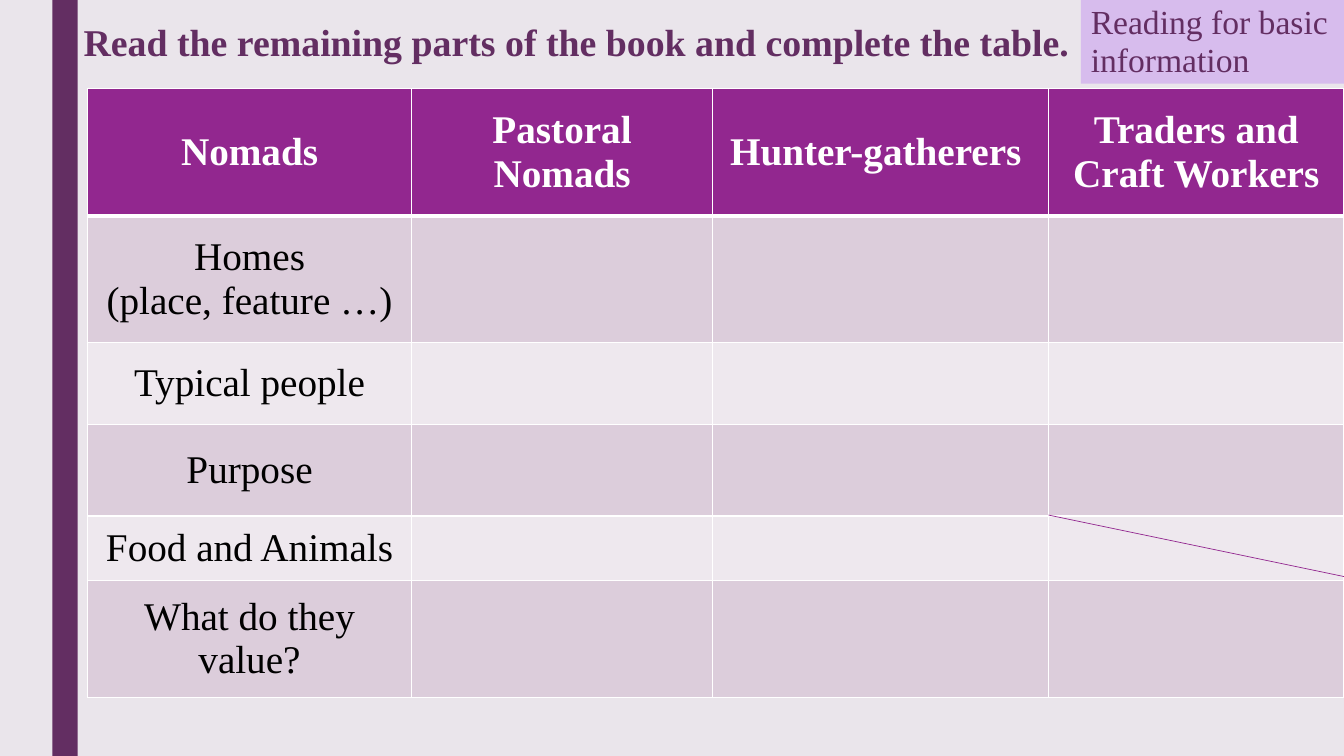
import pptx
import pptx.dml.color
import pptx.enum.shapes
import pptx.enum.text
import pptx.oxml
import pptx.util
from lxml import etree

Inches = pptx.util.Inches
Pt = pptx.util.Pt
RGB = pptx.dml.color.RGBColor.from_string
PP_ALIGN = pptx.enum.text.PP_ALIGN
ANCHOR = pptx.enum.text.MSO_ANCHOR
MSO_SHAPE = pptx.enum.shapes.MSO_SHAPE
NS = "http://schemas.openxmlformats.org/drawingml/2006/main"

THEME = {
    "font": "Times New Roman",
    "background": "EAE5EB",
    "plum": "632E62",
    "lilac": "D7BCED",
    "header": "92278F",
    "bands": ["DCCDDB", "EEE8EE"],
    "white": "FFFFFF",
    "black": "000000",
    "title_size": 27,
    "label_size": 24,
    "table_size": 28,
}


def write(tf, text, size, color, bold=False, align=PP_ALIGN.LEFT, spacing=None):
    for i, line in enumerate(text.split("\n")):
        p = tf.add_paragraph() if i else tf.paragraphs[0]
        p.alignment = align
        if spacing:
            p.line_spacing = spacing
            p.space_before, p.space_after = Pt(10), Pt(2)
        r = p.add_run()
        r.text = line
        r.font.name = THEME["font"]
        r.font.size = Pt(size)
        r.font.bold = bold
        r.font.color.rgb = RGB(color)


def add_rect(left, top, width, height, color):
    sp = s.shapes.add_shape(MSO_SHAPE.RECTANGLE, Inches(left), Inches(top), Inches(width), Inches(height))
    sp.shadow.inherit = False
    sp.fill.solid()
    sp.fill.fore_color.rgb = RGB(color)
    sp.line.fill.background()
    return sp


prs = pptx.Presentation()
prs.slide_width, prs.slide_height = Inches(13.33), Inches(7.5)
s = prs.slides.add_slide(prs.slide_layouts[5])
s.background.fill.solid()
s.background.fill.fore_color.rgb = RGB(THEME["background"])

add_rect(0.52, 0, 0.25, 7.5, THEME["plum"])

title = s.shapes.title
title.left, title.top, title.width, title.height = Inches(0.63), Inches(0.17), Inches(11.29), Inches(0.65)
tf = title.text_frame
tf.margin_left = Inches(0.2)
tf.vertical_anchor = ANCHOR.TOP
write(tf, "Read the remaining parts of the book and complete the table.",
      THEME["title_size"], THEME["plum"], bold=True, spacing=0.94)

rows = [
    ["Nomads", "Pastoral Nomads", "Hunter-gatherers ", "Traders and Craft Workers"],
    ["Homes\n(place, feature …)"],
    ["Typical people"],
    ["Purpose"],
    ["Food and Animals"],
    ["What do they value?"],
]
col_widths = [3.21, 2.99, 3.33, 2.93]
row_heights = [1.26, 1.26, 0.81, 0.91, 0.64, 1.16]

table = s.shapes.add_table(len(rows), len(col_widths), Inches(0.87), Inches(0.88),
                           Inches(sum(col_widths)), Inches(sum(row_heights))).table
for col, width in zip(table.columns, col_widths):
    col.width = Inches(width)
for row, height in zip(table.rows, row_heights):
    row.height = Inches(height)

for i, texts in enumerate(rows):
    is_header = i == 0
    for j in range(len(col_widths)):
        cell = table.cell(i, j)
        cell.vertical_anchor = ANCHOR.MIDDLE
        tcPr = cell._tc.get_or_add_tcPr()
        for side in "LRTB":
            thick = (i, side) in [(0, "B"), (1, "T")]
            tcPr.append(pptx.oxml.parse_xml(
                f'<a:ln{side} xmlns:a="{NS}" w="{Pt(3 if thick else 1)}"><a:solidFill>'
                f'<a:srgbClr val="{THEME["white"]}"/></a:solidFill></a:ln{side}>'))
        cell.fill.solid()
        cell.fill.fore_color.rgb = RGB(THEME["header"] if is_header else THEME["bands"][(i - 1) % 2])
        if j < len(texts):
            write(cell.text_frame, texts[j], THEME["table_size"],
                  THEME["white"] if is_header else THEME["black"],
                  bold=is_header, align=PP_ALIGN.CENTER)

label = add_rect(10.72, 0, 2.61, 0.83, THEME["lilac"])
label.text_frame.word_wrap = True
write(label.text_frame, "Reading for basic information", THEME["label_size"], THEME["plum"], spacing=0.94)

strike = s.shapes.add_connector(pptx.enum.shapes.MSO_CONNECTOR.STRAIGHT,
                                Inches(10.4), Inches(5.11), Inches(13.33), Inches(5.72))
strike.line.color.rgb = RGB(THEME["header"])
strike.line.width = Pt(0.5)
etree.SubElement(strike._element.spPr, f"{{{NS}}}effectLst")

prs.save("out.pptx")
